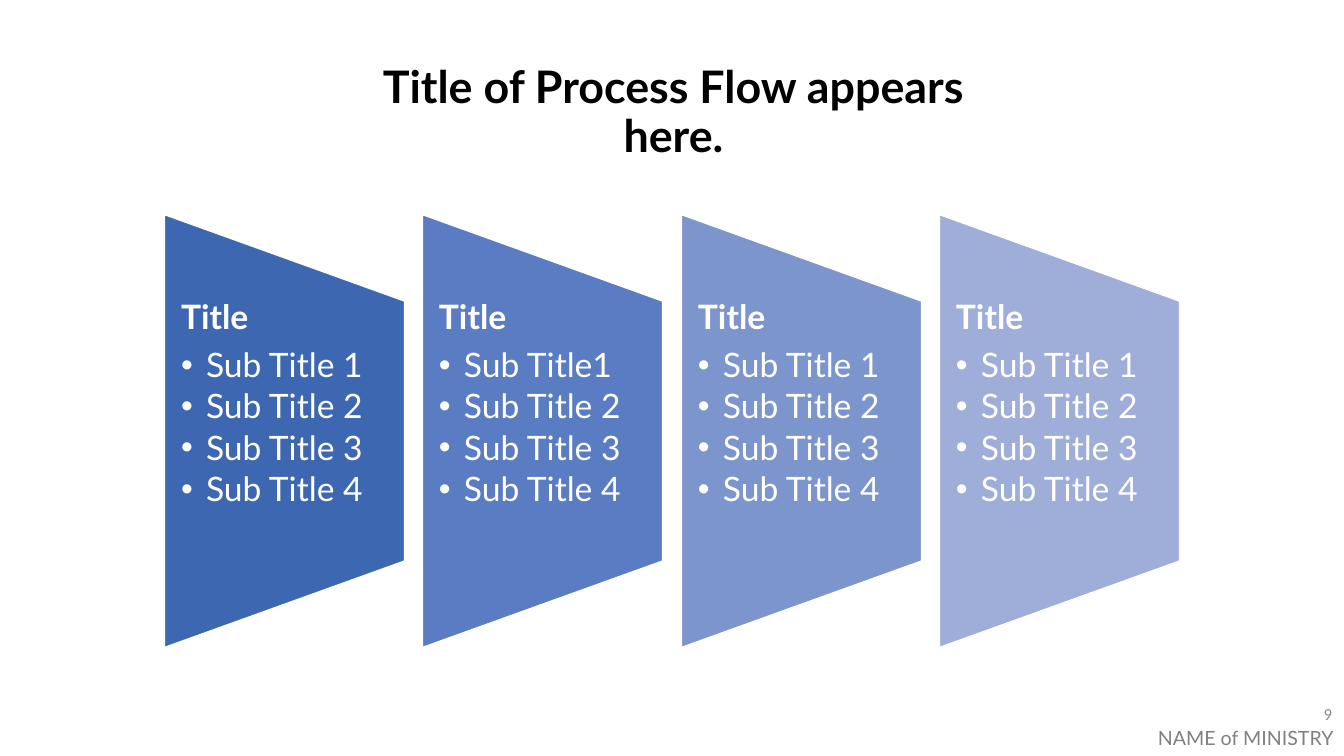
from lxml import etree
from pptx import Presentation
from pptx.dml.color import RGBColor
from pptx.enum.shapes import MSO_SHAPE
from pptx.enum.text import MSO_ANCHOR, PP_ALIGN
from pptx.oxml.ns import qn
from pptx.util import Emu, Pt

PANEL = MSO_SHAPE.FLOWCHART_MANUAL_OPERATION
TOP, MIDDLE = MSO_ANCHOR.TOP, MSO_ANCHOR.MIDDLE
LEFT, CENTER, RIGHT = PP_ALIGN.LEFT, PP_ALIGN.CENTER, PP_ALIGN.RIGHT

# Content
TITLE = "Title of Process Flow appears here."
FOOTER = "NAME of MINISTRY"
NUMBER = "9"
STEPS = [
    ("3E67B2", "Title", ["Sub Title 1", "Sub Title 2", "Sub Title 3", "Sub Title 4"]),
    ("5A7CC3", "Title", ["Sub Title1", "Sub Title 2", "Sub Title 3", "Sub Title 4"]),
    ("7D95CD", "Title", ["Sub Title 1", "Sub Title 2", "Sub Title 3", "Sub Title 4"]),
    ("9FAED8", "Title", ["Sub Title 1", "Sub Title 2", "Sub Title 3", "Sub Title 4"]),
]

# Layout in px, 100.8 to the inch
FIRST, LAST = 164, 939
WIDE, TALL = 241, 434
MID = 431
TEXT_H = 261
PAD, INDENT = 17, 25


def px(n):
    return Emu(round(n * 914400 / 100.8))


def color(code):
    return RGBColor.from_string(code)


def place(shape, x, y, w, h):
    shape.left, shape.top, shape.width, shape.height = px(x), px(y), px(w), px(h)


def style(para, size, code, bold=False, face="Lato", align=LEFT):
    para.alignment = align
    font = para.font
    font.size, font.bold, font.name = Pt(size), bold, face
    font.color.rgb = color(code)


def bullet(para):
    props = para._p.get_or_add_pPr()
    props.set("marL", str(px(INDENT)))
    props.set("indent", str(-px(INDENT)))
    etree.SubElement(props, qn("a:buFont")).set("typeface", "Arial")
    etree.SubElement(props, qn("a:buChar")).set("char", "•")


def add_text(slide, x, y, w, h):
    box = slide.shapes.add_textbox(px(x), px(y), px(w), px(h))
    box.text_frame.word_wrap = True
    return box.text_frame


def add_step(slide, x, fill, head, items):
    # Panel turned a quarter left, so its long side stands upright
    panel = slide.shapes.add_shape(
        PANEL, px(x + (WIDE - TALL) / 2), px(MID - WIDE / 2), px(TALL), px(WIDE))
    panel.rotation = 270
    panel.shadow.inherit = False
    panel.fill.solid()
    panel.fill.fore_color.rgb = color(fill)
    panel.line.color.rgb = color("FFFFFF")
    panel.line.width = Pt(1.5)

    # Heading and bullet list
    frame = add_text(slide, x, MID - TEXT_H / 2, WIDE, TEXT_H)
    frame.margin_left = frame.margin_right = px(PAD)
    frame.margin_top = frame.margin_bottom = 0
    frame.text = "\n".join([head, *items])
    for i, para in enumerate(frame.paragraphs):
        para.line_spacing = 0.9
        para.space_after = Pt(3.6 if i else 8.4)
        if i:
            para.level = 1
            bullet(para)
        style(para, 24, "FFFFFF", bold=not i)


def main():
    deck = Presentation()
    deck.slide_width, deck.slide_height = px(1344), px(756)
    slide = deck.slides.add_slide(deck.slide_layouts[5])

    # Title
    title = slide.shapes.title
    place(title, 331, 60, 685, 108)
    frame = title.text_frame
    frame.text = TITLE
    frame.word_wrap = True
    frame.vertical_anchor = TOP
    frame.paragraphs[0].line_spacing = 0.9
    style(frame.paragraphs[0], 32, "000000", bold=True, align=CENTER)

    # Process steps
    pitch = (LAST - FIRST) / (len(STEPS) - 1)
    for i, (fill, head, items) in enumerate(STEPS):
        add_step(slide, round(FIRST + i * pitch), fill, head, items)

    # Footer
    frame = add_text(slide, 1148, 721, 195, 34)
    frame.margin_right = 0
    frame.text = FOOTER
    style(frame.paragraphs[0], 14, "808080")

    # Slide number
    frame = add_text(slide, 1040, 694, 302, 40)
    frame.vertical_anchor = MIDDLE
    frame.text = NUMBER
    style(frame.paragraphs[0], 12, "8C8C8C", face="Calibri", align=RIGHT)

    deck.save("out.pptx")


if __name__ == "__main__":
    main()
